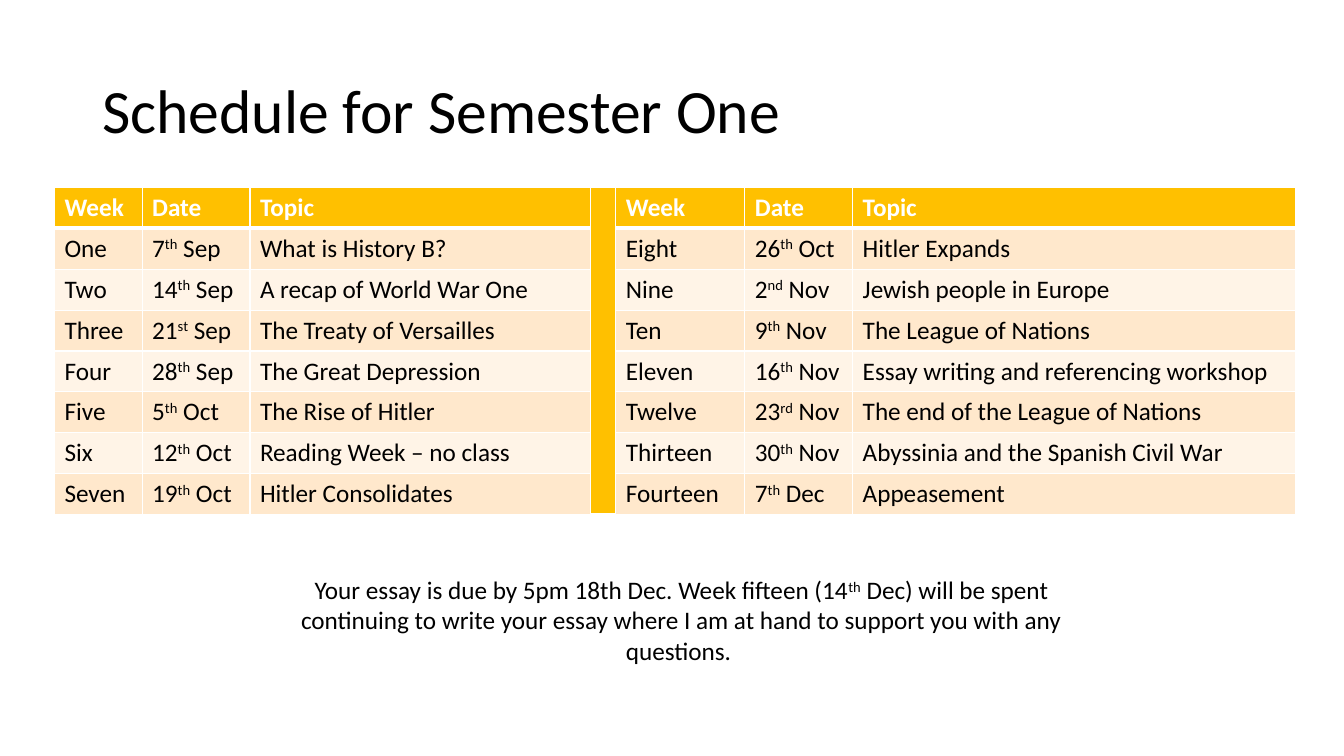
from dataclasses import dataclass

from lxml import etree
from pptx import Presentation
from pptx.dml.color import RGBColor
from pptx.enum.text import MSO_ANCHOR, PP_ALIGN
from pptx.oxml.ns import qn
from pptx.slide import Slide
from pptx.table import _Cell
from pptx.text.text import _Paragraph
from pptx.util import Pt

LEFT, CENTER = PP_ALIGN.LEFT, PP_ALIGN.CENTER
TOP, MIDDLE = MSO_ANCHOR.TOP, MSO_ANCHOR.MIDDLE

FONT = "Calibri"
BLACK, WHITE, GOLD = "000000", "FFFFFF", "FFC000"
BANDS = ("FFE8CC", "FFF4E7")
BODY_SIZE = 18

HEADINGS = ("Week", "Date", "Topic")
COLUMN_WIDTHS = (62.64, 77.04, 243.36, 18, 92.16, 77.04, 316.08)
GAP_COLUMN = len(HEADINGS)
ROW_HEIGHT = 29.2


@dataclass(frozen=True)
class Session:
    week: str
    date: str
    topic: str

    def texts(self) -> tuple[str, str, str]:
        return self.week, self.date, self.topic


@dataclass(frozen=True)
class TextBlock:
    text: str
    left: float
    top: float
    width: float
    height: float
    size: float
    alignment: PP_ALIGN
    anchor: MSO_ANCHOR
    line_spacing: float


# Text between two ^ marks is superscript.
FIRST_HALF = (
    Session("One", "7^th^ Sep", "What is History B?"),
    Session("Two", "14^th^ Sep", "A recap of World War One"),
    Session("Three", "21^st^ Sep", "The Treaty of Versailles"),
    Session("Four", "28^th^ Sep", "The Great Depression"),
    Session("Five", "5^th^ Oct", "The Rise of Hitler"),
    Session("Six", "12^th^ Oct", "Reading Week – no class"),
    Session("Seven", "19^th^ Oct", "Hitler Consolidates"),
)
SECOND_HALF = (
    Session("Eight", "26^th^ Oct", "Hitler Expands"),
    Session("Nine", "2^nd^ Nov", "Jewish people in Europe"),
    Session("Ten", "9^th^ Nov", "The League of Nations"),
    Session("Eleven", "16^th^ Nov", "Essay writing and referencing workshop"),
    Session("Twelve", "23^rd^ Nov", "The end of the League of Nations"),
    Session("Thirteen", "30^th^ Nov", "Abyssinia and the Spanish Civil War"),
    Session("Fourteen", "7^th^ Dec", "Appeasement"),
)

TITLE = TextBlock("Schedule for Semester One",
                  66, 28.8, 828, 104.4, 44, LEFT, MIDDLE, 0.9)
ESSAY_NOTE = TextBlock(
    "Your essay is due by 5pm 18th Dec. Week fifteen (14^th^ Dec) will be spent "
    "continuing to write your essay where I am at hand to support you with any questions. ",
    192.96, 406.8, 587.52, 72.72, BODY_SIZE, CENTER, TOP, 1)


def color(value: str) -> RGBColor:
    return RGBColor.from_string(value)


def add_runs(paragraph: _Paragraph, text: str, size: float,
             text_color: str = BLACK, bold: bool = False) -> None:
    """Add text run by run, raising the parts enclosed in ^ marks."""
    for index, part in enumerate(text.split("^")):
        run = paragraph.add_run()
        run.text = part
        run.font.name = FONT
        run.font.size = Pt(size)
        run.font.bold = bold
        run.font.color.rgb = color(text_color)
        if index % 2:
            run._r.get_or_add_rPr().set("baseline", "30000")


def add_text_block(slide: Slide, block: TextBlock) -> None:
    shape = slide.shapes.add_textbox(
        Pt(block.left), Pt(block.top), Pt(block.width), Pt(block.height))
    frame = shape.text_frame
    frame.word_wrap = True
    frame.vertical_anchor = block.anchor
    paragraph = frame.paragraphs[0]
    paragraph.alignment = block.alignment
    paragraph.line_spacing = block.line_spacing
    add_runs(paragraph, block.text, block.size)


def set_borders(cell: _Cell, top: float, bottom: float) -> None:
    properties = cell._tc.get_or_add_tcPr()
    for tag, width in (("lnL", 1), ("lnR", 1), ("lnT", top), ("lnB", bottom)):
        line = etree.SubElement(properties, qn(f"a:{tag}"), w=str(Pt(width)))
        fill = etree.SubElement(line, qn("a:solidFill"))
        etree.SubElement(fill, qn("a:srgbClr"), val=WHITE)


def add_schedule(slide: Slide) -> None:
    rows = [(*HEADINGS, "", *HEADINGS)]
    rows += [(*first.texts(), "", *second.texts())
             for first, second in zip(FIRST_HALF, SECOND_HALF)]
    table = slide.shapes.add_table(
        len(rows), len(COLUMN_WIDTHS), Pt(38.88), Pt(133.92),
        Pt(sum(COLUMN_WIDTHS)), Pt(ROW_HEIGHT * len(rows))).table
    table.horz_banding = False
    for column, width in zip(table.columns, COLUMN_WIDTHS):
        column.width = Pt(width)
    for row in table.rows:
        row.height = Pt(ROW_HEIGHT)
    table.cell(0, GAP_COLUMN).merge(table.cell(len(rows) - 1, GAP_COLUMN))

    for row_index, texts in enumerate(rows):
        is_header = row_index == 0
        for column_index, text in enumerate(texts):
            is_gap = column_index == GAP_COLUMN
            cell = table.cell(row_index, column_index)
            set_borders(cell, top=3 if row_index == 1 and not is_gap else 1,
                        bottom=3 if is_header else 1)
            cell.fill.solid()
            cell.fill.fore_color.rgb = color(
                GOLD if is_header or is_gap else BANDS[(row_index - 1) % 2])
            if text:
                add_runs(cell.text_frame.paragraphs[0], text, BODY_SIZE,
                         WHITE if is_header else BLACK, bold=is_header)


def main() -> None:
    presentation = Presentation()
    presentation.slide_width = Pt(960)
    presentation.slide_height = Pt(540)
    slide = presentation.slides.add_slide(presentation.slide_layouts[6])
    add_text_block(slide, TITLE)
    add_schedule(slide)
    add_text_block(slide, ESSAY_NOTE)
    presentation.save("out.pptx")


if __name__ == "__main__":
    main()
